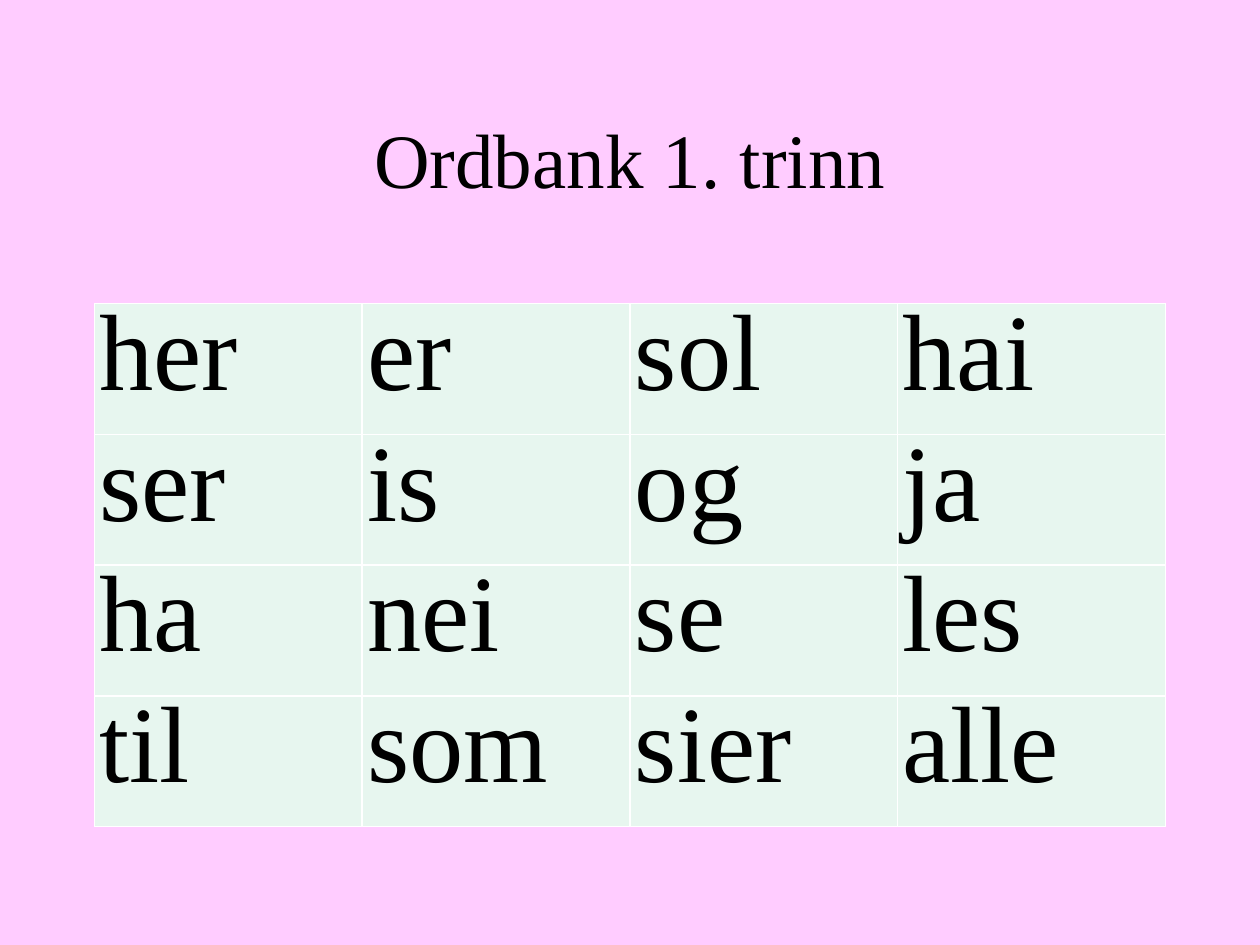
from lxml import etree
from pptx import Presentation
from pptx.dml.color import RGBColor
from pptx.enum.text import MSO_ANCHOR, PP_ALIGN
from pptx.oxml.ns import qn
from pptx.util import Inches, Pt

CENTER = PP_ALIGN.CENTER
LEFT = PP_ALIGN.LEFT
MIDDLE = MSO_ANCHOR.MIDDLE
TOP = MSO_ANCHOR.TOP

COLORS = {
    "background": "FFCCFF",
    "cell": "E7F6EF",
    "border": "FFFFFF",
    "text": "000000",
}

WORDS = [
    ["her", "er", "sol", "hai"],
    ["ser", "is", "og", "ja"],
    ["ha", "nei", "se", "les"],
    ["til", "som", "sier", "alle"],
]


class WordBankSlide:
    font = "Times New Roman"
    line_spacing = 0.9
    border_width = Pt(1)

    def __init__(self, presentation):
        layout = presentation.slide_layouts.get_by_name("Title Only")
        self.slide = presentation.slides.add_slide(layout)
        self.fill(self.slide.background, "background")

    def fill(self, target, color):
        target.fill.solid()
        target.fill.fore_color.rgb = RGBColor.from_string(COLORS[color])

    def add_text(self, text_frame, text, size, alignment):
        paragraph = text_frame.paragraphs[0]
        paragraph.alignment = alignment
        paragraph.line_spacing = self.line_spacing
        run = paragraph.add_run()
        run.text = text
        run.font.name = self.font
        run.font.size = Pt(size)
        run.font.color.rgb = RGBColor.from_string(COLORS["text"])

    def title(self, text, left, top, width, height):
        shape = self.slide.shapes.title
        shape.left, shape.top = Inches(left), Inches(top)
        shape.width, shape.height = Inches(width), Inches(height)
        shape.text_frame.vertical_anchor = MIDDLE
        self.add_text(shape.text_frame, text, 44, CENTER)

    def border(self, cell):
        properties = cell._tc.get_or_add_tcPr()
        for side in ("a:lnL", "a:lnR", "a:lnT", "a:lnB"):
            line = etree.SubElement(properties, qn(side), w=str(self.border_width))
            solid = etree.SubElement(line, qn("a:solidFill"))
            etree.SubElement(solid, qn("a:srgbClr"), val=COLORS["border"])

    def table(self, rows, left, top, width, height):
        table = self.slide.shapes.add_table(
            len(rows), len(rows[0]),
            Inches(left), Inches(top), Inches(width), Inches(height),
        ).table
        table.first_row = False
        table.horz_banding = False
        for row_index, row in enumerate(rows):
            for column_index, word in enumerate(row):
                cell = table.cell(row_index, column_index)
                cell.margin_left = cell.margin_right = Inches(0.04)
                cell.margin_top = cell.margin_bottom = 0
                cell.vertical_anchor = TOP
                self.border(cell)
                self.fill(cell, "cell")
                self.add_text(cell.text_frame, word, 62, LEFT)


def main():
    presentation = Presentation()
    presentation.slide_width = Inches(10)
    presentation.slide_height = Inches(7.5)
    slide = WordBankSlide(presentation)
    slide.title("Ordbank 1. trinn", 0.75, 0.51, 8.5, 1.57)
    slide.table(WORDS, 0.75, 2.41, 8.5, 4.15)
    presentation.save("out.pptx")


if __name__ == "__main__":
    main()
